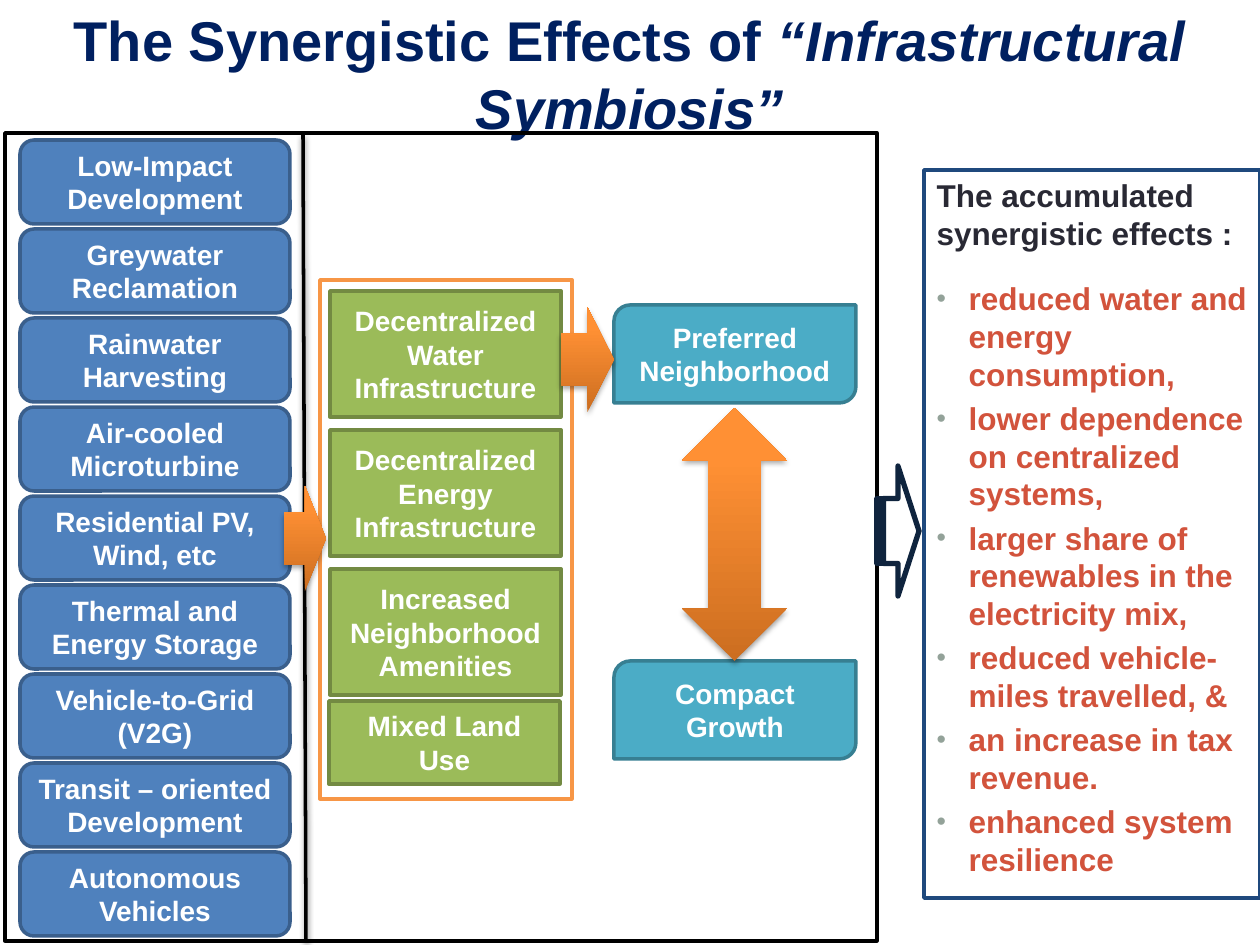
from lxml.etree import SubElement
from pptx import Presentation
from pptx.dml.color import RGBColor
from pptx.enum.shapes import MSO_CONNECTOR, MSO_SHAPE
from pptx.enum.text import MSO_ANCHOR, MSO_AUTO_SIZE, PP_ALIGN
from pptx.oxml.ns import qn
from pptx.util import Pt

EMU_PER_PX = 914400 / 126

TECHNOLOGIES = [
    "Low-Impact Development", "Greywater Reclamation", "Rainwater Harvesting",
    "Air-cooled Microturbine", "Residential PV, Wind, etc",
    "Thermal and Energy Storage", "Vehicle-to-Grid (V2G)",
    "Transit – oriented Development", "Autonomous Vehicles",
]
INFRASTRUCTURE = [
    "Decentralized Water Infrastructure",
    "Decentralized Energy Infrastructure",
    "Increased\nNeighborhood Amenities",
]
EFFECTS = [
    "reduced water and energy consumption,",
    "lower dependence on centralized systems,",
    "larger share of renewables in the electricity mix,",
    "reduced vehicle-miles travelled, &",
    "an increase in tax revenue.",
    "enhanced system resilience",
]


def px(length):
    return round(length * EMU_PER_PX)


def rgb(color):
    return RGBColor.from_string(color)


def add_effects(properties, opacity=0):
    """Replace the theme shadow: with a soft one below, or none at opacity 0."""
    effects = properties.find(qn("a:effectLst"))
    if effects is None:
        effects = SubElement(properties, qn("a:effectLst"))
    if opacity:
        shadow = SubElement(effects, qn("a:outerShdw"), blurRad="40000",
                            dist="23000", dir="5400000", rotWithShape="0")
        black = SubElement(shadow, qn("a:srgbClr"), val="000000")
        SubElement(black, qn("a:alpha"), val=str(opacity * 1000))


class SlideBuilder:
    FONT = "Arial"

    def __init__(self, slide):
        self.slide = slide
        self.shapes = slide.shapes

    def style(self, paragraph, size, color):
        font = paragraph.font
        font.name, font.size, font.bold = self.FONT, Pt(size), True
        font.color.rgb = rgb(color)

    def place(self, shape, left, top, width, height):
        shape.left, shape.top = px(left), px(top)
        shape.width, shape.height = px(width), px(height)

    def title(self, plain, emphasis, *bounds):
        heading = self.slide.shapes.title
        self.place(heading, *bounds)
        frame = heading.text_frame
        frame.auto_size = MSO_AUTO_SIZE.NONE
        frame.vertical_anchor = MSO_ANCHOR.MIDDLE
        paragraph = frame.paragraphs[0]
        paragraph.alignment = PP_ALIGN.CENTER
        self.style(paragraph, 32, "002060")
        paragraph.add_run().text = plain
        stressed = paragraph.add_run()
        stressed.text = emphasis
        stressed.font.italic = True

    def effects_list(self, lead, effects, *bounds):
        body = self.slide.placeholders[1]
        self.place(body, *bounds)
        body.line.color.rgb = rgb("1F497D")
        body.line.width = Pt(2)
        frame = body.text_frame
        frame.auto_size = MSO_AUTO_SIZE.NONE
        frame.text = "\n".join([lead, *effects])
        lead_paragraph, *items = frame.paragraphs
        self.bullet(lead_paragraph, None)
        lead_paragraph.space_after = Pt(12)
        self.style(lead_paragraph, 18, "292934")
        for item in items:
            item.level = 1
            self.bullet(item, "•")
            self.style(item, 18, "D2533C")

    def bullet(self, paragraph, mark):
        indent = px(32) if mark else 0
        properties = paragraph._p.get_or_add_pPr()
        properties.set("marL", str(indent))
        properties.set("indent", str(-indent))
        if not mark:
            SubElement(properties, qn("a:buNone"))
            return
        color = SubElement(properties, qn("a:buClr"))
        SubElement(color, qn("a:srgbClr"), val="93A299")
        SubElement(properties, qn("a:buSzPct"), val="85000")
        SubElement(properties, qn("a:buFont"), typeface=self.FONT)
        SubElement(properties, qn("a:buChar"), char=mark)

    def shape(self, preset, *bounds):
        shape = self.shapes.add_shape(preset, *map(px, bounds))
        shape.shadow.inherit = False
        return shape

    def outline(self, preset, color, weight, *bounds):
        shape = self.shape(preset, *bounds)
        shape.fill.background()
        shape.line.color.rgb = rgb(color)
        shape.line.width = Pt(weight)

    def box(self, preset, text, fill, line, *bounds):
        shape = self.shape(preset, *bounds)
        shape.fill.solid()
        shape.fill.fore_color.rgb = rgb(fill)
        shape.line.color.rgb = rgb(line)
        shape.line.width = Pt(2)
        frame = shape.text_frame
        frame.word_wrap = True
        frame.vertical_anchor = MSO_ANCHOR.MIDDLE
        frame.text = text
        for paragraph in frame.paragraphs:
            paragraph.alignment = PP_ALIGN.CENTER
            self.style(paragraph, 16, "FFFFFF")

    def arrow(self, preset, *bounds):
        shape = self.shape(preset, *bounds)
        shape.line.fill.background()
        shape.fill.gradient()
        shape.fill.gradient_angle = 90
        stops = shape.fill.gradient_stops
        for stop, position, color in zip(stops, (0, 0.8), ("CC6E20", "FF9034")):
            stop.position = position
            stop.color.rgb = rgb(color)
        add_effects(shape._element.spPr, 35)

    def divider(self, *ends):
        line = self.shapes.add_connector(MSO_CONNECTOR.STRAIGHT, *map(px, ends))
        line.line.color.rgb = rgb("000000")
        line.line.width = Pt(2)
        add_effects(line._element.spPr, 38)

    def infrastructure_group(self):
        self.shapes = self.slide.shapes.add_group_shape().shapes
        green = ("9BBB59", "738A42")
        for row, text in enumerate(INFRASTRUCTURE):
            self.box(MSO_SHAPE.RECTANGLE, text, *green, 330, 291 + 139 * row, 231, 126)
        self.outline(MSO_SHAPE.RECTANGLE, "F79646", 2, 320, 280, 252, 519)
        self.box(MSO_SHAPE.RECTANGLE, "Mixed Land Use", *green, 329, 701, 231, 83)
        self.shapes = self.slide.shapes


def main():
    deck = Presentation()
    deck.slide_width, deck.slide_height = px(1260), px(945)
    builder = SlideBuilder(deck.slides.add_slide(deck.slide_layouts[1]))

    builder.title("The Synergistic Effects of ", "“Infrastructural Symbiosis”",
                  21, 10, 1218, 126)
    builder.effects_list("The accumulated synergistic effects :", EFFECTS,
                         924, 170, 336, 728)
    for row, text in enumerate(TECHNOLOGIES):
        builder.box(MSO_SHAPE.FLOWCHART_ALTERNATE_PROCESS, text, "4F81BD", "3A5F8C",
                    20, 140 + 89 * row, 270, 84)
    for text, top in (("Compact Growth", 661), ("Preferred Neighborhood", 305)):
        builder.box(MSO_SHAPE.ROUND_2_DIAG_RECTANGLE, text, "4BACC6", "377F92",
                    614, top, 242, 98)
    builder.arrow(MSO_SHAPE.UP_DOWN_ARROW, 682, 408, 105, 253)
    builder.outline(MSO_SHAPE.RECTANGLE, "000000", 2, 5, 133, 872, 808)
    builder.outline(MSO_SHAPE.STRIPED_RIGHT_ARROW, "0F243E", 3, 877, 466, 42, 130)
    builder.infrastructure_group()
    builder.arrow(MSO_SHAPE.RIGHT_ARROW, 561, 307, 53, 105)
    builder.divider(303, 135, 306, 941)
    builder.arrow(MSO_SHAPE.RIGHT_ARROW, 284, 486, 42, 105)

    deck.save("out.pptx")


if __name__ == "__main__":
    main()
